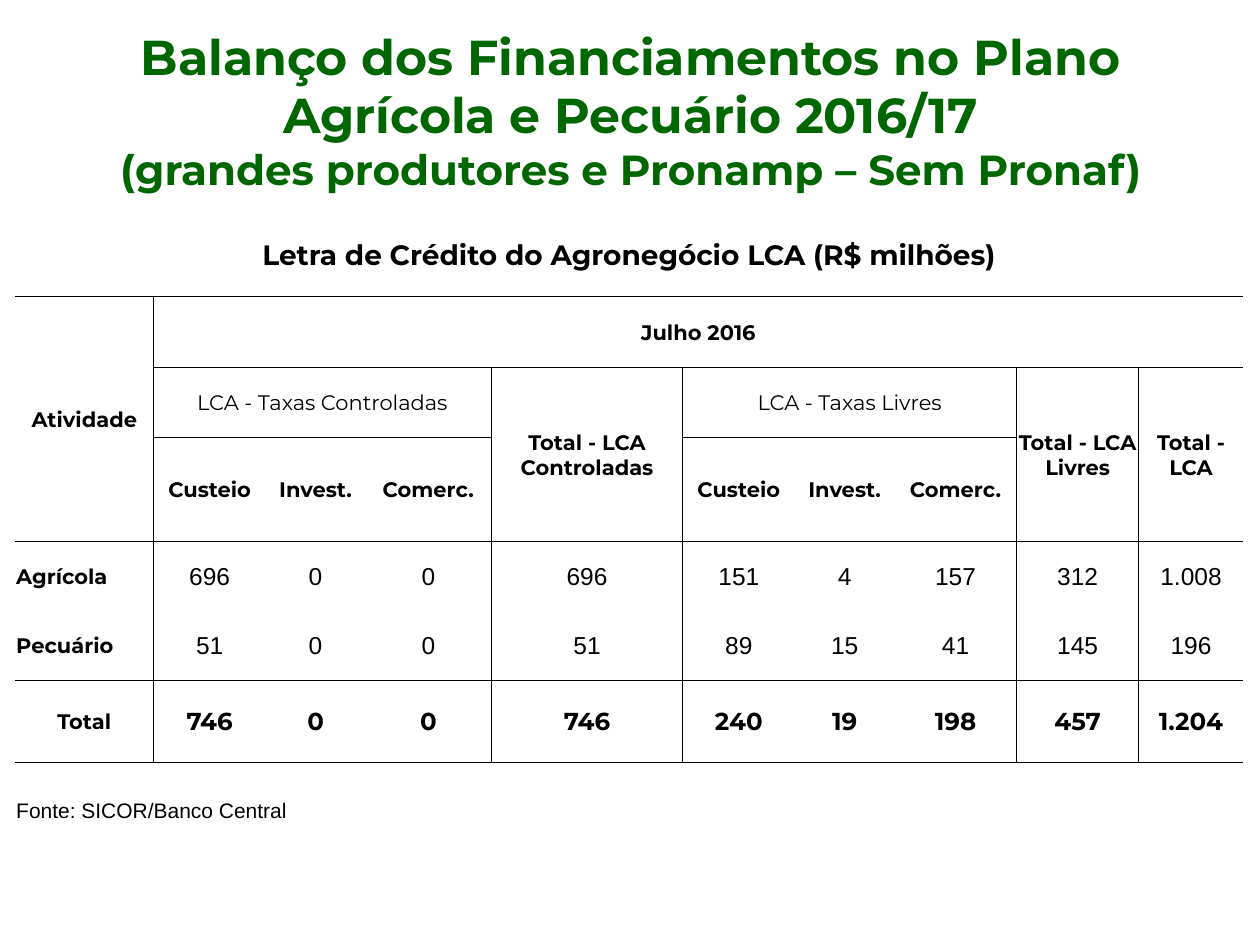
from lxml import etree
from pptx import Presentation
from pptx.dml.color import RGBColor
from pptx.enum import text
from pptx.oxml import ns
from pptx.util import Pt

GREEN = RGBColor(0x00, 0x66, 0x00)
BLACK = RGBColor(0x00, 0x00, 0x00)
LABEL = {"name": "Montserrat", "size": Pt(12), "bold": True}
PLAIN = {**LABEL, "bold": False}
CAPTION = {**LABEL, "size": Pt(16)}
NUMBER = {"name": "Arial", "size": Pt(14), "bold": False}
TOTAL = {**LABEL, "size": Pt(14)}
SOURCE = {**NUMBER, "size": Pt(12)}

COL_WIDTHS = [79.2, 64.1, 56.9, 72, 109.4, 64.1, 56.9, 69.8, 69.8, 59.8]
ROW_HEIGHTS = [46.8, 41, 39.6, 59.8, 39.6, 39.6, 46.8, 54.7]
ACTIVITIES = ["Custeio", "Invest.", "Comerc."]
HEADERS = [
    (0, 0, 1, 10, "Letra de Crédito do Agronegócio LCA (R$ milhões)", CAPTION),
    (1, 0, 3, 1, "Atividade", LABEL),
    (1, 1, 1, 9, "Julho 2016", LABEL),
    (2, 1, 1, 3, "LCA - Taxas Controladas", PLAIN),
    (2, 4, 2, 1, "Total - LCA Controladas", LABEL),
    (2, 5, 1, 3, "LCA - Taxas Livres", PLAIN),
    (2, 8, 2, 1, "Total - LCA Livres", LABEL),
    (2, 9, 2, 1, "Total - LCA", LABEL),
]
BODY = [
    ("Agrícola", "696 0 0 696 151 4 157 312 1.008", NUMBER),
    ("Pecuário", "51 0 0 51 89 15 41 145 196", NUMBER),
    ("Total", "746 0 0 746 240 19 198 457 1.204", TOTAL),
]
RULED_COLS = {0: range(10), 1: range(1, 10), 2: [1, 2, 3, 5, 6, 7],
              3: range(10), 5: range(10), 6: range(10)}
DIVIDERS = {0: range(1, 7), **{c: range(2, 7) for c in (3, 4, 7, 8)}}


def set_font(font, fmt, color):
    for name, value in fmt.items():
        setattr(font, name, value)
    font.color.rgb = color


def write_cell(cell, words, fmt, align=text.PP_ALIGN.CENTER):
    p = cell.text_frame.paragraphs[0]
    p.alignment = align
    r = p.add_run()
    r.text = words
    set_font(r.font, fmt, BLACK)


def draw_borders(cell, row, col):
    last_row = row + (cell.span_height if cell.is_merge_origin else 1) - 1
    last_col = col + (cell.span_width if cell.is_merge_origin else 1) - 1
    edges = {
        "a:lnL": row in DIVIDERS.get(col - 1, ()),
        "a:lnR": row in DIVIDERS.get(last_col, ()),
        "a:lnT": col in RULED_COLS.get(row - 1, ()),
        "a:lnB": col in RULED_COLS.get(last_row, ()),
    }
    tc_pr = cell._tc.get_or_add_tcPr()
    for i, (tag, ruled) in enumerate(edges.items()):
        ln = etree.Element(ns.qn(tag), w=str(Pt(0.5)))
        fill = etree.SubElement(ln, ns.qn("a:solidFill" if ruled else "a:noFill"))
        if ruled:
            etree.SubElement(fill, ns.qn("a:srgbClr"), val=str(BLACK))
        tc_pr.insert(i, ln)


def add_title(s, left, top, width, height):
    sp = s.shapes.title
    sp.left, sp.top, sp.width, sp.height = left, top, width, height
    tf = sp.text_frame
    tf.word_wrap = True
    tf.auto_size = text.MSO_AUTO_SIZE.NONE
    tf.vertical_anchor = text.MSO_ANCHOR.MIDDLE
    p = tf.paragraphs[0]
    p.alignment = text.PP_ALIGN.CENTER
    lines = [("Balanço dos Financiamentos no Plano Agrícola e Pecuário 2016/17", 28),
             ("(grandes produtores e Pronamp – Sem Pronaf)", 24)]
    for i, (words, size) in enumerate(lines):
        if i:
            p.add_line_break()
        r = p.add_run()
        r.text = words
        set_font(r.font, {**LABEL, "size": Pt(size)}, GREEN)


def add_credit_table(s, left, top, width, height):
    table = s.shapes.add_table(len(ROW_HEIGHTS), len(COL_WIDTHS),
                               left, top, width, height).table
    table.first_row = table.horz_banding = False
    for column, size in zip(table.columns, COL_WIDTHS):
        column.width = Pt(size)
    for row, size in zip(table.rows, ROW_HEIGHTS):
        row.height = Pt(size)

    for row, col, rows, cols, words, fmt in HEADERS:
        cell = table.cell(row, col)
        if rows * cols > 1:
            cell.merge(table.cell(row + rows - 1, col + cols - 1))
        write_cell(cell, words, fmt)
    for first in (1, 5):
        for col, words in enumerate(ACTIVITIES, first):
            write_cell(table.cell(3, col), words, LABEL)
    for row, (activity, values, fmt) in enumerate(BODY, 4):
        align = text.PP_ALIGN.CENTER if fmt is TOTAL else text.PP_ALIGN.LEFT
        write_cell(table.cell(row, 0), activity, LABEL, align)
        for col, value in enumerate(values.split(), 1):
            write_cell(table.cell(row, col), value, fmt)
    table.cell(7, 0).merge(table.cell(7, 2))
    write_cell(table.cell(7, 0), "Fonte: SICOR/Banco Central", SOURCE, text.PP_ALIGN.LEFT)

    for row in range(len(ROW_HEIGHTS)):
        for col in range(len(COL_WIDTHS)):
            cell = table.cell(row, col)
            cell.margin_left = cell.margin_top = cell.margin_right = Pt(0.7)
            cell.margin_bottom = Pt(0)
            cell.vertical_anchor = text.MSO_ANCHOR.MIDDLE
            cell.fill.background()
            draw_borders(cell, row, col)


def main():
    prs = Presentation()
    prs.slide_width, prs.slide_height = Pt(720), Pt(540)
    s = prs.slides.add_slide(prs.slide_layouts[5])
    add_title(s, Pt(36.7), Pt(19.4), Pt(647.3), Pt(87.1))
    add_credit_table(s, Pt(8.6), Pt(122.4), Pt(sum(COL_WIDTHS)), Pt(sum(ROW_HEIGHTS)))
    prs.save("out.pptx")


if __name__ == "__main__":
    main()
